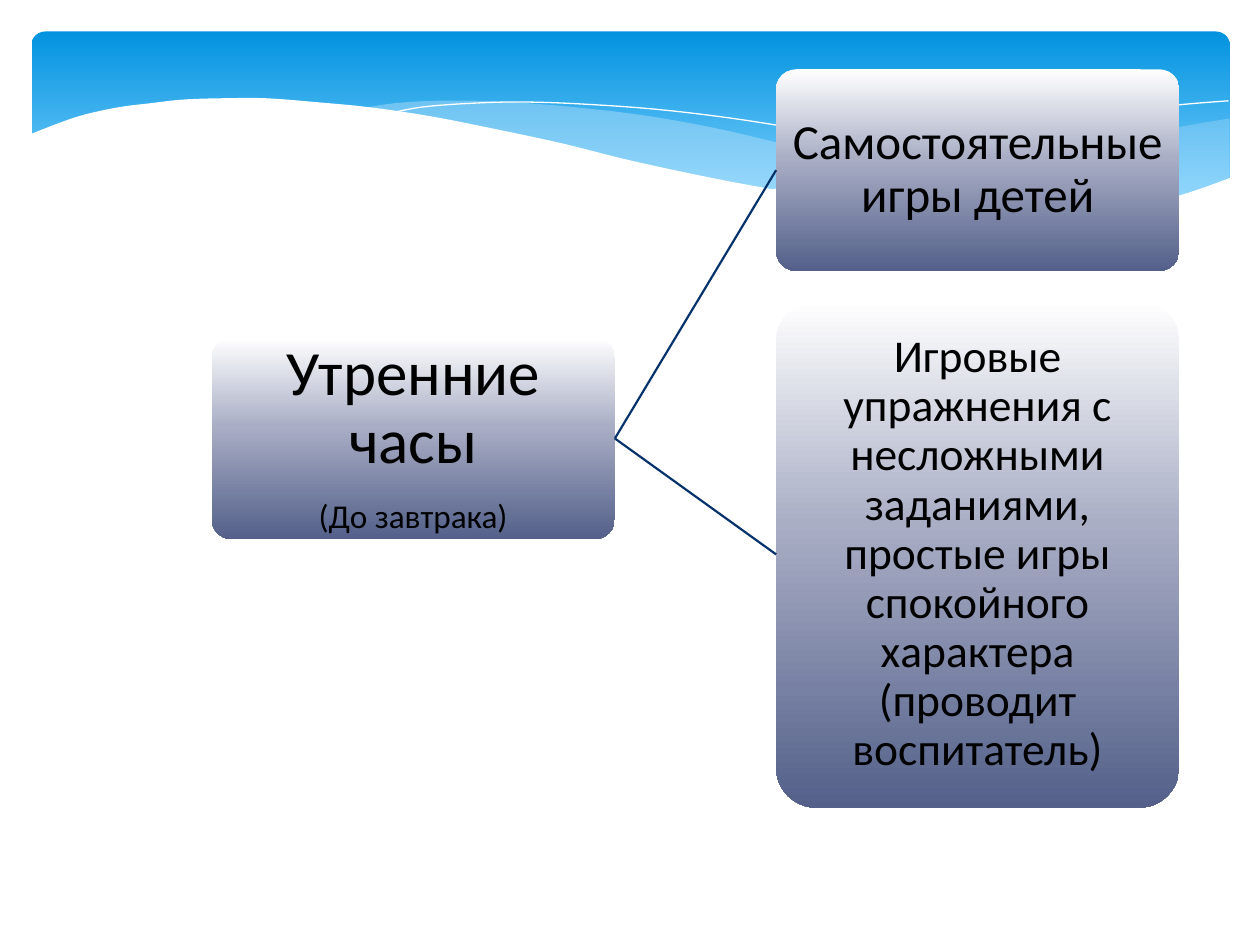
from dataclasses import dataclass
from typing import Optional

from lxml import etree
from pptx import Presentation
from pptx.dml.color import RGBColor
from pptx.enum.shapes import MSO_CONNECTOR, MSO_SHAPE
from pptx.enum.text import MSO_ANCHOR, PP_ALIGN
from pptx.oxml.ns import qn
from pptx.util import Inches, Pt

ROUND = MSO_SHAPE.ROUNDED_RECTANGLE
STRAIGHT = MSO_CONNECTOR.STRAIGHT
MIDDLE = MSO_ANCHOR.MIDDLE
CENTER = PP_ALIGN.CENTER
LEFT, RIGHT = 1, 3

# The grid has 100 columns and 75 rows of square cells
COLS, ROWS = 100, 75
WIDE, HIGH = Inches(10), Inches(7.5)
CELL = WIDE / COLS

HUES = {
    "white": "FFFFFF", "ink": "000000", "link": "06326C",
    "sky": "0293E0", "pale": "83D3FE", "wave": "C6E7FC",
    "mist": "A9AEC5", "slate": "54608A",
}
BAND = [(0, "sky"), (90, "pale")]
FADE = [(0, "white"), (44, "mist"), (100, "slate")]

Point = tuple[float, float]


@dataclass
class Wave:
    """Curves run end to end; a curve of two points is straight."""
    curves: list[list[Point]]
    fill: Optional[str] = None
    alpha: int = 100


@dataclass
class Card:
    left: float
    top: float
    height: float
    pad: float
    text: list[tuple[str, int]]


WAVES = [
    Wave([[(97.6, 9.4), (93.5, 10.1), (89.1, 11), (86.1, 11.8), (80.5, 13.1),
           (75.3, 14.3), (70.6, 15.2), (66.1, 16)],
          [(66.1, 16), (70.5, 16.5), (74.5, 16.9), (79.2, 17.2),
           (83.5, 17.2), (87.2, 16.9), (91.3, 16.2), (94.2, 15.4),
           (97.6, 14.1)]], "wave", 29),
    Wave([[(89.3, 16.7), (83.7, 15.9), (77.5, 14.9), (70.6, 13.4),
           (62.9, 11.6), (56.9, 10.2), (51.4, 9.2), (46.5, 8.6),
           (42, 8.2), (38, 8), (34.4, 8), (31.3, 8.2), (28.6, 8.6)],
          [(28.6, 8.6), (34.2, 9.4), (40.4, 10.6), (44.9, 11.6),
           (53, 13.5), (60.1, 15), (66.5, 16.1), (72.2, 16.8),
           (77.3, 17.2), (81.8, 17.3), (85.7, 17.1), (89.3, 16.7)]],
         "wave", 40),
    Wave([[(30.9, 9), (33.5, 8.5), (37.4, 8.2), (41.6, 8.1), (46.9, 8.3),
           (53.3, 8.8), (60.8, 9.8), (69.5, 11.4), (79.5, 13.6),
           (90.7, 16.6)]]),
    Wave([[(61.3, 15.1), (67.2, 13.5), (74.8, 11.7), (83.6, 9.9),
           (89.5, 8.8), (93.8, 8.3), (97.5, 8)]]),
    Wave([[(97.7, 14.1), (94, 15.4), (89.9, 16.4), (85, 17), (80.9, 17.1),
           (76.1, 17), (70.8, 16.5), (64.8, 15.6), (57.9, 14.4),
           (50.3, 12.8), (44.7, 11.4), (39.1, 10.2), (34, 9.2),
           (29.2, 8.5), (25, 8.1), (21.1, 7.8), (17.7, 7.8),
           (14.6, 7.9), (11.9, 8.2), (9.5, 8.5), (6.7, 9.1),
           (4.6, 9.8), (2.3, 10.7)],
          [(2.3, 10.7), (2.3, 22.4)], [(2.3, 22.4), (97.7, 22.4)]],
         "white"),
]

# Two columns of cards; the first card stands halfway down the second column
SIDE, LOW, GAP = 32, 16, 2.4
TALL = 40.2
COL_A, TOP = 16.8, 5.5
COL_B = COL_A + 1.4 * SIDE
ROOT = Card(COL_A, TOP + (LOW + GAP + TALL - LOW) / 2, LOW, 0.3,
            [("Утренние часы", 36), ("(До завтрака)", 19)])
PARTS = [
    Card(COL_B, TOP, LOW, 0.2, [("Самостоятельные игры детей", 28)]),
    Card(COL_B, TOP + LOW + GAP, TALL, 0.2,
         [("Игровые упражнения с несложными заданиями,\n"
           "простые игры спокойного характера (проводит воспитатель)", 26)]),
]


def cells(size: float) -> int:
    return round(size * CELL)


def tint(name: str) -> RGBColor:
    return RGBColor.from_string(HUES[name])


def shade(shape, stops: list[tuple[int, str]]) -> None:
    """Fill from top to bottom with any number of stops."""
    shape.fill.gradient()
    shape.fill.gradient_angle = 270
    bar = shape._element.spPr.find(".//" + qn("a:gsLst"))
    for old in list(bar):
        bar.remove(old)
    for place, name in stops:
        stop = etree.SubElement(bar, qn("a:gs"), pos=str(place * 1000))
        etree.SubElement(stop, qn("a:srgbClr"), val=HUES[name])


def add_box(slide, left: float, top: float, width: float, height: float,
            bend: float, stops: list[tuple[int, str]]):
    box = slide.shapes.add_shape(ROUND, cells(left), cells(top),
                                 cells(width), cells(height))
    box.adjustments[0] = bend
    box.shadow.inherit = False
    box.line.fill.background()
    shade(box, stops)
    return box


def smooth(curve: list[Point], steps: int = 5) -> list[Point]:
    """Trace a Catmull-Rom curve through the points."""
    if len(curve) == 2:
        return curve
    ends = [curve[0], *curve, curve[-1]]
    trace = [curve[0]]
    for a, b, c, d in zip(ends, ends[1:], ends[2:], ends[3:]):
        for step in range(1, steps + 1):
            t = step / steps
            x, y = (
                (2 * q + (r - p) * t + (2 * p - 5 * q + 4 * r - s) * t ** 2
                 + (3 * q - p - 3 * r + s) * t ** 3) / 2
                for p, q, r, s in zip(a, b, c, d))
            trace.append((x, y))
    return trace


def add_wave(slide, wave: Wave) -> None:
    trace = [(cells(x), cells(y))
             for curve in wave.curves for x, y in smooth(curve)]
    pen = slide.shapes.build_freeform(*trace[0])
    pen.add_line_segments(trace[1:], close=wave.fill is not None)
    shape = pen.convert_to_shape()
    shape.shadow.inherit = False
    if wave.fill is None:
        shape.fill.background()
        shape.line.color.rgb = tint("white")
        shape.line.width = Pt(0)
        return
    shape.line.fill.background()
    shape.fill.solid()
    shape.fill.fore_color.rgb = tint(wave.fill)
    if wave.alpha < 100:
        hue = shape._element.spPr.find(
            qn("a:solidFill") + "/" + qn("a:srgbClr"))
        etree.SubElement(hue, qn("a:alpha"), val=str(wave.alpha * 1000))


def add_card(slide, card: Card):
    box = add_box(slide, card.left, card.top, SIDE, card.height, 0.1, FADE)
    frame = box.text_frame
    frame.word_wrap = True
    frame.vertical_anchor = MIDDLE
    frame.margin_left = frame.margin_right = cells(card.pad)
    frame.margin_top = frame.margin_bottom = cells(card.pad)
    for num, (text, size) in enumerate(card.text):
        para = frame.add_paragraph() if num else frame.paragraphs[0]
        para.alignment = CENTER
        para.line_spacing = 0.9
        para.space_after = Pt(round(0.35 * size, 1))
        for row, line in enumerate(text.split("\n")):
            if row:
                para.add_line_break()
            run = para.add_run()
            run.text = line
            run.font.name = "Calibri"
            run.font.size = Pt(size)
            run.font.color.rgb = tint("ink")
    return box


def add_link(slide, start, end) -> None:
    link = slide.shapes.add_connector(STRAIGHT, 0, 0, 0, 0)
    link.begin_connect(start, RIGHT)
    link.end_connect(end, LEFT)
    link.line.color.rgb = tint("link")
    link.line.width = Pt(1.25)
    etree.SubElement(link._element.spPr, qn("a:effectLst"))


def main() -> None:
    deck = Presentation()
    deck.slide_width, deck.slide_height = WIDE, HIGH
    slide = deck.slides.add_slide(deck.slide_layouts[6])

    # Sky band with waves
    add_box(slide, 2.5, 2.5, COLS - 4.9, 15.6, 0.07, BAND)
    for wave in WAVES:
        add_wave(slide, wave)

    # Cards and their links
    root = add_card(slide, ROOT)
    for part in PARTS:
        add_link(slide, root, add_card(slide, part))

    deck.save("out.pptx")


if __name__ == "__main__":
    main()
